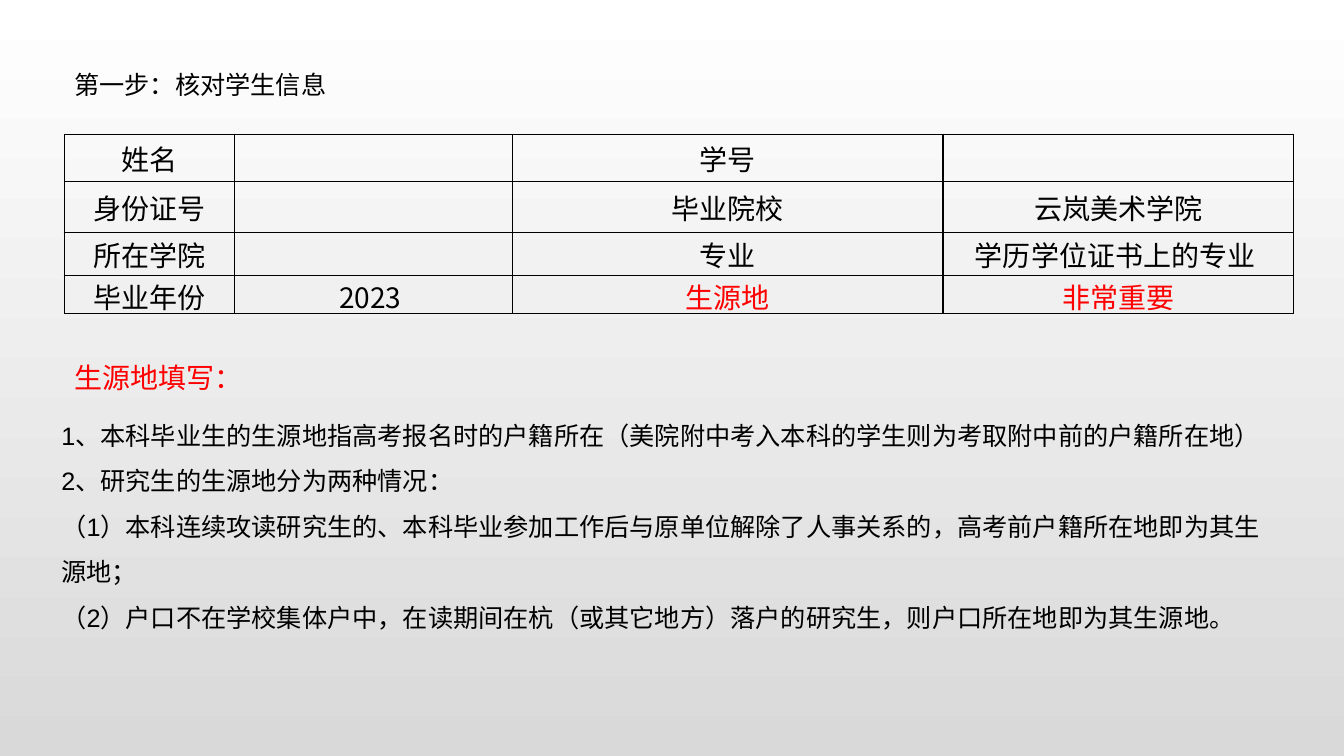
from lxml import etree
from pptx import Presentation
from pptx.dml.color import RGBColor
from pptx.enum.text import MSO_ANCHOR, PP_ALIGN
from pptx.oxml.ns import qn
from pptx.util import Pt

MIDDLE = MSO_ANCHOR.MIDDLE
CENTER = PP_ALIGN.CENTER
BLACK = RGBColor(0x00, 0x00, 0x00)
RED = RGBColor(0xFF, 0x00, 0x00)
WHITE = RGBColor(0xFF, 0xFF, 0xFF)
GRAY = RGBColor(0xD9, 0xD9, 0xD9)
LATIN_FONT = "Arial"
CHINESE_FONT = "Noto Sans CJK SC"

BODY_FORMAT = {"size": Pt(18), "name": LATIN_FONT}
LARGE_FORMAT = {"size": Pt(20), "name": CHINESE_FONT}
CELL_FORMAT = {
    "margin_left": Pt(5), "margin_right": Pt(5),
    "margin_top": 0, "margin_bottom": 0, "vertical_anchor": MIDDLE,
}

COLUMN_WIDTHS = [121.7, 198.7, 307.4, 250.6]
ROW_HEIGHTS = [34, 36, 31, 27.2]
STUDENT_INFORMATION = [
    ["姓名", "", "学号", ""],
    ["身份证号", "", "毕业院校", "云岚美术学院"],
    ["所在学院", "", "专业", "学历学位证书上的专业 "],
    ["毕业年份", "2023 ", "生源地", "非常重要"],
]
IMPORTANT_TEXTS = {"生源地", "非常重要"}
ORIGIN_RULES = [
    "1、本科毕业生的生源地指高考报名时的户籍所在（美院附中考入本科的学生则为考取附中前的户籍所在地）",
    "2、研究生的生源地分为两种情况：",
    "（1）本科连续攻读研究生的、本科毕业参加工作后与原单位解除了人事关系的，高考前户籍所在地即为其生源地；",
    "（2）户口不在学校集体户中，在读期间在杭（或其它地方）落户的研究生，则户口所在地即为其生源地。",
]


def apply_format(target, values):
    for name, value in values.items():
        setattr(target, name, value)


def add_run(paragraph, text, font_format, color):
    run = paragraph.add_run()
    run.text = text
    apply_format(run.font, font_format)
    run.font.color.rgb = color
    east_asian = etree.SubElement(run.font._element, qn("a:ea"))
    east_asian.set("typeface", CHINESE_FONT)


def add_text(slide, box, lines, font_format, color=BLACK, line_spacing=1.0):
    shape = slide.shapes.add_textbox(*map(Pt, box))
    text_frame = shape.text_frame
    text_frame.word_wrap = True
    for index, line in enumerate(lines):
        paragraph = text_frame.add_paragraph() if index else text_frame.paragraphs[0]
        paragraph.line_spacing = line_spacing
        add_run(paragraph, line, font_format, color)


def set_borders(cell):
    properties = cell._tc.get_or_add_tcPr()
    for index, side in enumerate(("a:lnL", "a:lnR", "a:lnT", "a:lnB")):
        line = etree.Element(qn(side), w=str(Pt(1)))
        fill = etree.SubElement(line, qn("a:solidFill"))
        etree.SubElement(fill, qn("a:srgbClr"), val=str(BLACK))
        properties.insert(index, line)


def fill_cell(cell, text):
    apply_format(cell, CELL_FORMAT)
    cell.fill.background()
    set_borders(cell)
    if text:
        paragraph = cell.text_frame.paragraphs[0]
        paragraph.alignment = CENTER
        color = RED if text in IMPORTANT_TEXTS else BLACK
        add_run(paragraph, text, LARGE_FORMAT, color)


def add_information_table(slide, left, top):
    table = slide.shapes.add_table(
        len(ROW_HEIGHTS), len(COLUMN_WIDTHS), Pt(left), Pt(top),
        Pt(sum(COLUMN_WIDTHS)), Pt(sum(ROW_HEIGHTS)),
    ).table
    apply_format(table, {"first_row": False, "horz_banding": False})
    for column, width in zip(table.columns, COLUMN_WIDTHS):
        column.width = Pt(width)
    for row, height, texts in zip(table.rows, ROW_HEIGHTS, STUDENT_INFORMATION):
        row.height = Pt(height)
        for cell, text in zip(row.cells, texts):
            fill_cell(cell, text)


def set_background(slide):
    fill = slide.background.fill
    fill.gradient()
    fill.gradient_angle = 270
    for stop, color, position in zip(fill.gradient_stops, (WHITE, GRAY), (0, 1)):
        stop.color.rgb = color
        stop.position = position


def main():
    presentation = Presentation()
    presentation.slide_width = Pt(960)
    presentation.slide_height = Pt(540)
    slide = presentation.slides.add_slide(presentation.slide_layouts[6])
    set_background(slide)
    add_text(slide, (46, 46, 206.6, 29), ["第一步：核对学生信息"], BODY_FORMAT)
    add_information_table(slide, 45.8, 95.8)
    add_text(slide, (45.8, 254, 480, 31.5), ["生源地填写："], LARGE_FORMAT, RED)
    add_text(slide, (36.7, 286, 888, 170.6), ORIGIN_RULES, BODY_FORMAT, line_spacing=1.5)
    presentation.save("out.pptx")


if __name__ == "__main__":
    main()
